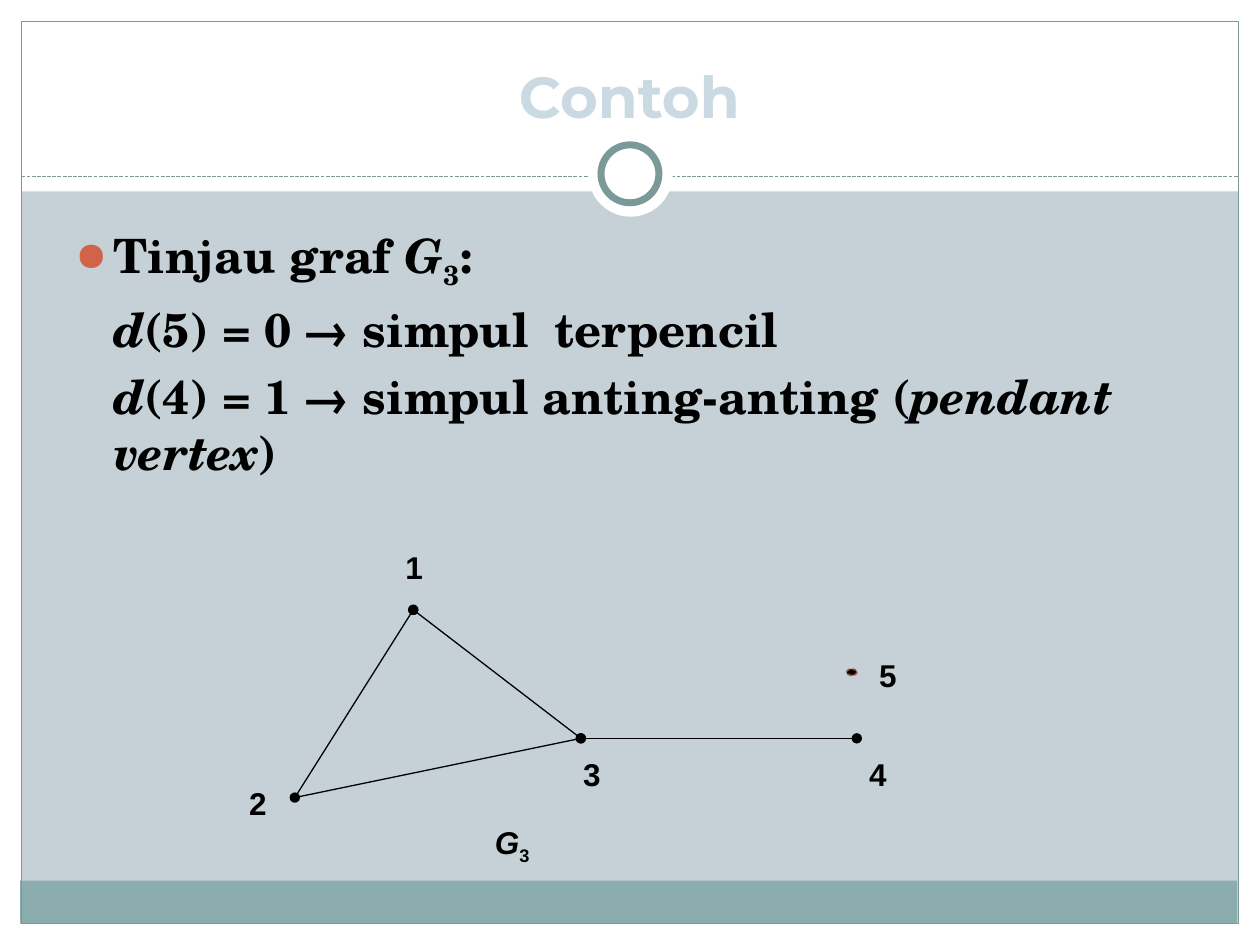
from dataclasses import dataclass

import pptx
import pptx.util
import pptx.dml.color
import pptx.enum.dml
import pptx.enum.shapes
import pptx.enum.text
import pptx.oxml
import pptx.oxml.ns
from pptx.util import Inches

RECT = pptx.enum.shapes.MSO_SHAPE.RECTANGLE
OVAL = pptx.enum.shapes.MSO_SHAPE.OVAL
DASHED = pptx.enum.dml.MSO_LINE.SQUARE_DOT


@dataclass(frozen=True)
class Theme:
    paper: str = "FFFFFF"
    ground: str = "C5D1D7"
    footer: str = "8CADAE"
    trim: str = "7C999A"
    title: str = "CBDAE2"
    ink: str = "000000"
    bullet: str = "D16349"
    dot_rim: str = "9B4936"
    title_font: str = "Montserrat"
    body_font: str = "TeX Gyre Schola"
    label_font: str = "Arial"
    title_size: float = 33
    body_size: float = 27
    label_size: float = 18


THEME = Theme()

VERTICES = {1: (3.28, 4.84), 2: (2.34, 6.33), 3: (4.61, 5.86), 4: (6.8, 5.86)}
EDGES = [(2, 1, True), (1, 3, True), (3, 2, False), (3, 4, True)]
LABELS = {1: (3.12, 4.3), 2: (1.88, 6.17), 3: (4.53, 5.94),
          4: (6.8, 5.94), 5: (6.88, 5.16)}


def rgb(color):
    return pptx.dml.color.RGBColor.from_string(color)


def add_xml(parent, markup):
    parent.append(pptx.oxml.parse_xml(
        markup.replace("/>", f" {pptx.oxml.ns.nsdecls('a')}/>", 1)))


def style_line(line, color, width, dash=None):
    line.color.rgb = rgb(color)
    line.width = pptx.util.Pt(width)
    if dash is not None:
        line.dash_style = dash


def add_figure(slide, preset, box, fill=None, line=None):
    """Add a preset shape; line holds color, width and optionally a dash."""
    figure = slide.shapes.add_shape(preset, *map(Inches, box))
    figure.shadow.inherit = False
    if fill:
        figure.fill.solid()
        figure.fill.fore_color.rgb = rgb(fill)
    else:
        figure.fill.background()
    if line:
        style_line(figure.line, *line)
    else:
        figure.line.fill.background()


def add_line(slide, start, end, color, dash=None, dotted_ends=False):
    connector = slide.shapes.add_connector(
        pptx.enum.shapes.MSO_CONNECTOR.STRAIGHT, *map(Inches, start + end))
    style_line(connector.line, color, 0.75, dash)
    if dotted_ends:
        outline = connector.line._get_or_add_ln()
        add_xml(outline, '<a:headEnd type="oval"/>')
        add_xml(outline, '<a:tailEnd type="oval"/>')
    add_xml(connector._element.spPr, "<a:effectLst/>")


def add_run(paragraph, text, font, size, color=THEME.ink, style=""):
    """Add a bold run; style may be "italic" or "subscript"."""
    run = paragraph.add_run()
    run.text = text
    run.font.name = font
    run.font.size = pptx.util.Pt(size)
    run.font.bold = True
    run.font.italic = style == "italic"
    run.font.color.rgb = rgb(color)
    if style == "subscript":
        run.font._element.set("baseline", "-25000")


def add_decor(slide):
    for margin in ((0, 7.33, 10, 0.17), (0, 0, 10, 1.52),
                   (0, 0, 0.17, 7.5), (9.83, 0, 0.17, 7.5)):
        add_figure(slide, RECT, margin, THEME.paper)
    add_figure(slide, RECT, (0.16, 6.99, 9.66, 0.34), THEME.footer)
    add_figure(slide, RECT, (0.17, 0.17, 9.66, 7.16), line=(THEME.trim, 0.75))
    add_line(slide, (0.17, 1.4), (9.83, 1.4), THEME.trim, DASHED)
    add_figure(slide, OVAL, (4.67, 1.05, 0.67, 0.67), THEME.paper)
    add_figure(slide, OVAL, (4.77, 1.15, 0.46, 0.46), THEME.paper,
               (THEME.trim, 4))


def fill_title(slide, text):
    title = slide.shapes.title
    title.left, title.top, title.width, title.height = map(
        Inches, (0.33, 0.25, 9.33, 0.83))
    frame = title.text_frame
    frame.auto_size = pptx.enum.text.MSO_AUTO_SIZE.NONE
    frame.vertical_anchor = pptx.enum.text.MSO_ANCHOR.BOTTOM
    paragraph = frame.paragraphs[0]
    paragraph.alignment = pptx.enum.text.PP_ALIGN.CENTER
    add_run(paragraph, text, THEME.title_font, THEME.title_size, THEME.title)
    # The header band must lie behind the title.
    slide.shapes._spTree.append(title._element)


def add_body(slide):
    frame = slide.shapes.add_textbox(
        *map(Inches, (0.5, 1.75, 9, 2.62))).text_frame
    frame.word_wrap = True
    lines = [
        [("Tinjau graf ", ""), ("G", "italic"), ("3", "subscript"), (":", "")],
        [("d", "italic"), ("(5) = 0\t→ simpul\tterpencil", "")],
        [("d", "italic"), ("(4) = 1\t→ simpul anting-anting (", ""),
         ("pendant vertex", "italic"), (")", "")],
    ]
    for index, runs in enumerate(lines):
        paragraph = frame.add_paragraph() if index else frame.paragraphs[0]
        properties = paragraph._p.get_or_add_pPr()
        properties.set("marL", str(Inches(0.3)))
        if index:
            properties.set("indent", "0")
            add_xml(properties, "<a:buNone/>")
            tabs = pptx.oxml.parse_xml(
                f"<a:tabLst {pptx.oxml.ns.nsdecls('a')}></a:tabLst>")
            for stop in (1.75, 3.85):
                add_xml(tabs, f'<a:tab pos="{Inches(stop)}" algn="l"/>')
            properties.append(tabs)
            paragraph.space_before = pptx.util.Pt(0.2 * THEME.body_size)
        else:
            properties.set("indent", str(-Inches(0.3)))
            color = pptx.oxml.parse_xml(
                f"<a:buClr {pptx.oxml.ns.nsdecls('a')}></a:buClr>")
            add_xml(color, f'<a:srgbClr val="{THEME.bullet}"/>')
            properties.append(color)
            add_xml(properties, '<a:buSzPct val="85000"/>')
            add_xml(properties, '<a:buChar char="●"/>')
        for text, style in runs:
            add_run(paragraph, text, THEME.body_font, THEME.body_size,
                    style=style)


def add_label(slide, position, runs, width=0.34):
    label = slide.shapes.add_textbox(
        *map(Inches, position + (width, 0.4)))
    label.text_frame.word_wrap = False
    label.text_frame.auto_size = pptx.enum.text.MSO_AUTO_SIZE.SHAPE_TO_FIT_TEXT
    for text, style in runs:
        add_run(label.text_frame.paragraphs[0], text, THEME.label_font,
                THEME.label_size, style=style)


def add_graph(slide):
    for start, end, dotted_ends in EDGES:
        add_line(slide, VERTICES[start], VERTICES[end], THEME.ink,
                 dotted_ends=dotted_ends)
    add_figure(slide, OVAL, (6.72, 5.31, 0.08, 0.05), THEME.ink,
               (THEME.dot_rim, 0.9, DASHED))
    for number, position in LABELS.items():
        add_label(slide, position, [(str(number), "")])
    add_label(slide, (3.83, 6.48), [("G", "italic"), ("3", "subscript")], 0.49)


def main():
    deck = pptx.Presentation()
    deck.slide_width, deck.slide_height = Inches(10), Inches(7.5)
    slide = deck.slides.add_slide(deck.slide_layouts.get_by_name("Title Only"))
    slide.background.fill.solid()
    slide.background.fill.fore_color.rgb = rgb(THEME.ground)
    add_decor(slide)
    fill_title(slide, "Contoh")
    add_body(slide)
    add_graph(slide)
    deck.save("out.pptx")


if __name__ == "__main__":
    main()
